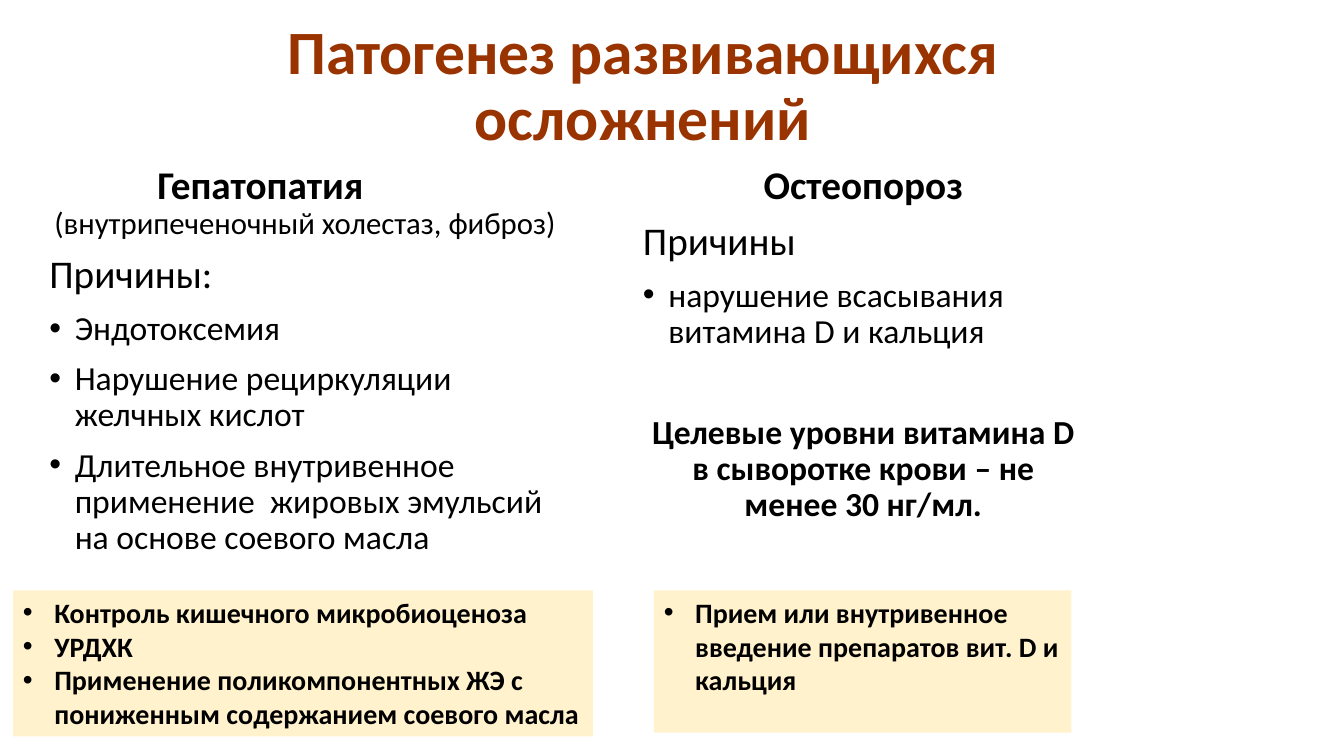
from pptx import Presentation
from pptx import util as u
from pptx.dml import color
from pptx.enum import shapes, text
from pptx.oxml import parse_xml
from pptx.oxml.ns import nsdecls

COLORS = {"title": "993300", "body": "000000", "measures": "FFF2CC"}
CENTER, LEFT = text.PP_ALIGN.CENTER, text.PP_ALIGN.LEFT

# Paragraph styles: font, spacing, alignment, left margin (cm), bullet
BODY = {"line_spacing": 0.9, "space_before": u.Pt(10)}
STYLES = {
    "title": dict(size=44, bold=True, ink="title", align=CENTER, spacing={"line_spacing": 0.9}),
    "heading": dict(size=28, bold=True, align=CENTER),
    "shifted heading": dict(size=28, bold=True, margin=2.72),
    "subheading": dict(size=22, align=CENTER,
                       spacing={"line_spacing": 0.9, "space_before": u.Pt(0)}),
    "causes": dict(size=28),
    "item": dict(size=24, margin=0.64, bullet=True),
    "target": dict(size=24, bold=True, align=CENTER,
                   spacing={"line_spacing": 0.9, "space_before": u.Pt(46)}),
    "measure": dict(size=20, bold=True, margin=0.79, bullet=True,
                    spacing={"line_spacing": 1.0, "space_before": u.Pt(0)}),
}


def rgb(name):
    return color.RGBColor.from_string(COLORS[name])


def apply(target, values):
    for key, value in values.items():
        setattr(target, key, value)


class SlideBuilder:
    def __init__(self, slide, font="Calibri"):
        self.slide = slide
        self.font = font

    def place(self, shape, box):
        apply(shape, dict(zip(("left", "top", "width", "height"), map(u.Cm, box))))

    def fill_text(self, frame, lines, anchor):
        apply(frame, {"word_wrap": True, "auto_size": text.MSO_AUTO_SIZE.NONE,
                      "vertical_anchor": anchor})
        for number, (style, wording) in enumerate(lines):
            paragraph = frame.add_paragraph() if number else frame.paragraphs[0]
            self.style_line(paragraph, wording, **STYLES[style])

    def style_line(self, paragraph, wording, size, bold=False, ink="body",
                   align=LEFT, margin=0, bullet=False, spacing=BODY):
        apply(paragraph, {"alignment": align, "space_after": u.Pt(0), **spacing})
        run = paragraph.add_run()
        run.text = wording
        apply(run.font, {"name": self.font, "size": u.Pt(size), "bold": bold})
        run.font.color.rgb = rgb(ink)

        # Indents and bullet
        properties = paragraph._p.get_or_add_pPr()
        properties.set("marL", str(u.Cm(margin)))
        properties.set("indent", str(-u.Cm(margin) if bullet else 0))
        marks = ['buFont typeface="Arial"', 'buChar char="•"'] if bullet else ["buNone"]
        for mark in marks:
            name, _, attribute = mark.partition(" ")
            properties.append(parse_xml(f'<a:{name} {nsdecls("a")} {attribute}/>'))

    def title(self, box, wording):
        heading = self.slide.shapes.title
        self.place(heading, box)
        self.fill_text(heading.text_frame, [("title", wording)], text.MSO_ANCHOR.MIDDLE)

    def column(self, index, box, lines):
        body = self.slide.placeholders[index]
        self.place(body, box)
        self.fill_text(body.text_frame, lines, text.MSO_ANCHOR.TOP)

    def measures(self, box, items):
        panel = self.slide.shapes.add_shape(shapes.MSO_SHAPE.RECTANGLE, *map(u.Cm, box))
        panel.shadow.inherit = False
        panel.fill.solid()
        panel.fill.fore_color.rgb = rgb("measures")
        panel.line.fill.background()
        self.fill_text(panel.text_frame, [("measure", item) for item in items],
                       text.MSO_ANCHOR.TOP)


def main():
    deck = Presentation()
    apply(deck, {"slide_width": u.Cm(33.87), "slide_height": u.Cm(19.05)})
    two_content = deck.slide_layouts[3]
    builder = SlideBuilder(deck.slides.add_slide(two_content))

    builder.title((2.57, 0.36, 27.28, 3.68), "Патогенез развивающихся осложнений")

    # Liver complications
    builder.column(1, (0.99, 4.04, 13.39, 10.31), [
        ("shifted heading", "Гепатопатия"),
        ("subheading", "(внутрипеченочный холестаз, фиброз)"),
        ("causes", "Причины:"),
        ("item", "Эндотоксемия"),
        ("item", "Нарушение рециркуляции желчных кислот"),
        ("item", "Длительное внутривенное применение  жировых эмульсий на основе соевого масла"),
    ])

    # Bone complications
    builder.column(2, (15.95, 4.04, 11.61, 12.09), [
        ("heading", "Остеопороз"),
        ("causes", "Причины"),
        ("item", "нарушение всасывания витамина D и кальция"),
        ("target", "Целевые уровни витамина D в сыворотке крови – не менее 30 нг/мл."),
    ])

    # Measures under each column
    builder.measures((0.33, 14.88, 14.61, 3.68), [
        "Контроль кишечного микробиоценоза",
        "УРДХК",
        "Применение поликомпонентных ЖЭ с пониженным содержанием соевого масла",
    ])
    builder.measures((16.48, 14.88, 10.52, 3.58), [
        "Прием или внутривенное введение препаратов вит. D и кальция",
    ])

    deck.save("out.pptx")


if __name__ == "__main__":
    main()
